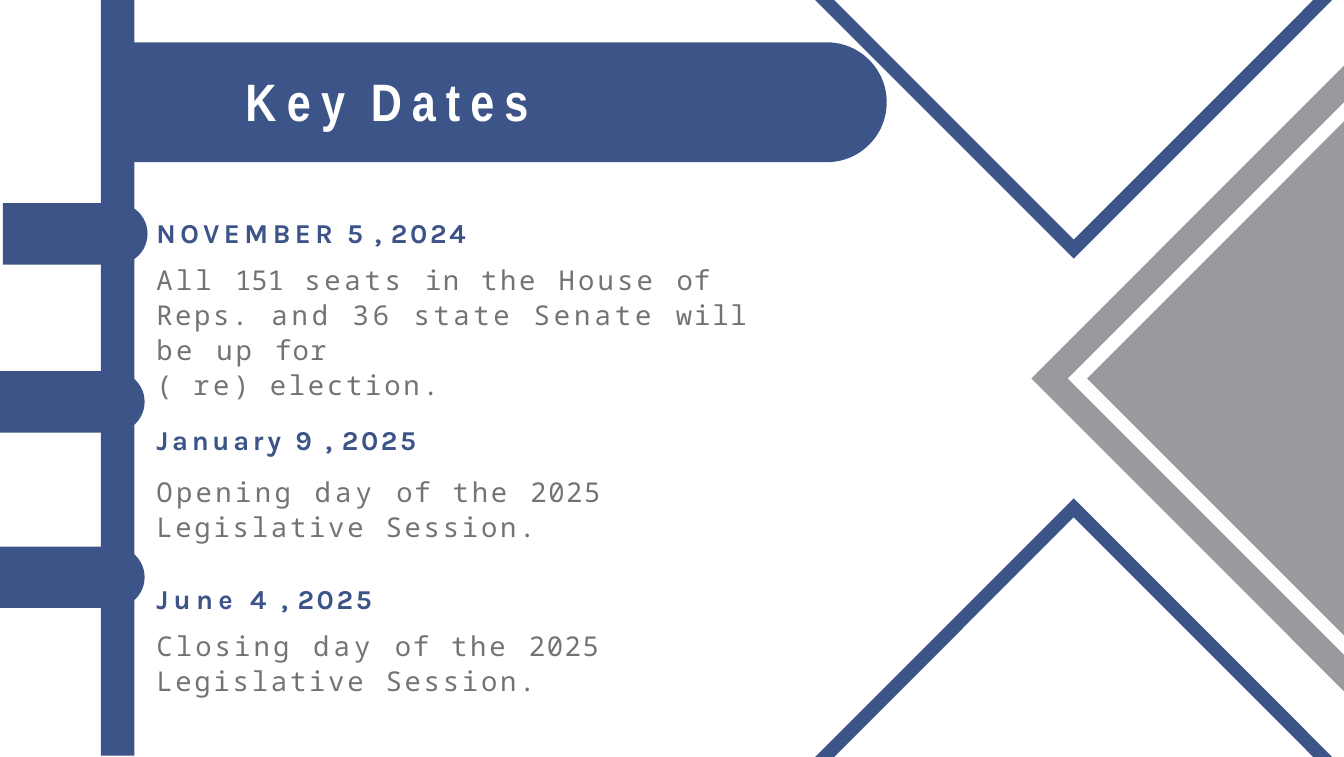
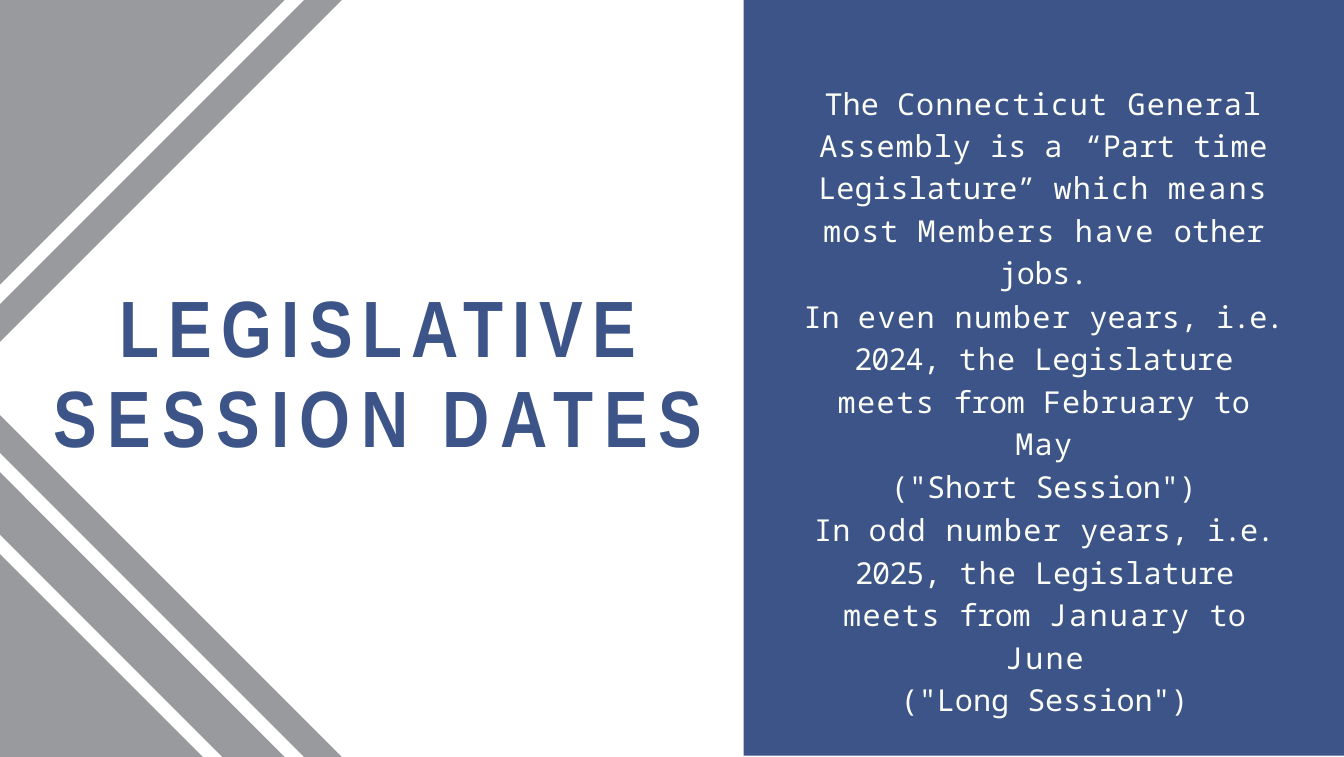
from dataclasses import dataclass

from pptx import Presentation
from pptx.dml.color import RGBColor
from pptx.enum.shapes import MSO_SHAPE as Preset
from pptx.enum.text import MSO_ANCHOR as Anchor, MSO_AUTO_SIZE as AutoSize, PP_ALIGN as Align
from pptx.util import Emu, Pt

PX = 9525
SLIDE_WIDTH, SLIDE_HEIGHT = 920, 518
BLUE, GRAY, WHITE = "3C5487", "999A9D", "FFFFFF"
BODY_GRAY, CREAM = "737373", "FBFDF6"
BAND = 13


@dataclass
class TextStyle:
    """Look shared by the runs of a paragraph; gap is the spacing of word spaces."""
    font: str
    size: float
    color: str
    gap: float
    bold: bool = False
    align: Align = Align.LEFT


BANNER_TITLE = TextStyle("Arial Narrow", 27, WHITE, 1.7, True)
SECTION_TITLE = TextStyle("Arial Narrow", 41, BLUE, 2.4, True, Align.CENTER)
DATE = TextStyle("Karla", 14, BLUE, 1.3, True)
DETAIL = TextStyle("Noto Sans Mono", 14, BODY_GRAY, 2)
PANEL_TEXT = TextStyle("Noto Sans Mono", 15.5, CREAM, 0, False, Align.CENTER)

SESSION = [("the ", 1.4), ("2025 ", 0.8), ("Legislative Session.", 1.4)]
KEY_DATES = [
    (DATE, 0, 1, [("NOVEMBER ", 2.3), ("5 ", 1.1), (", ", 0), ("2024", 1.4)]),
    (DETAIL, 6.3, 1.07, [
        ("All ", 1.6), ("151 ", -0.1), ("seats ", 1.9), ("in ", 0.7), ("the ", 1.4),
        ("House ", 1.6), ("of ", 0.5), ("Reps. ", 1.3), ("and 36 ", 2), ("state ", 1.8),
        ("Senate ", 2), ("will ", 0.9), ("be ", 1.8), ("up ", 1.4), ("for", 0.6)]),
    (DETAIL, 1.1, 1, [("(", 2), (" ", 0), ("re)", 1.9), (" ", 0), ("election.", 1.4)]),
    (DATE, 11.2, 1, [("January 9 ", 1.9), (", ", 0), ("2025", 1.4)]),
    (DETAIL, 9, 1.07, [("Opening ", 1.7), ("day ", 2.1), ("of ", 0.8), *SESSION]),
    (DATE, 20, 1, [("June 4 ", 2.7), (", ", 0), ("2025", 1.4)]),
    (DETAIL, 6.3, 1.07, [("Closing ", 1.6), ("day ", 2.1), ("of ", 0.8), *SESSION]),
]
PANEL_LINES = 1.17
PART_TIME = [
    ("The ", 0), ("Connecticut General ", 0.6), ("Assembly ", 0.5), ("is ", 0), ("a ", 2.1),
    ("“Part ", 0), ("time ", 0.3), ("Legislature” ", 0), ("which ", 0.6), ("means ", 1.1),
    ("most ", 0.5), ("Members ", 0.9), ("have ", 1.1), ("other ", 0), ("jobs.", -0.2)]


def rgb(color):
    """Turn a hex string into a colour."""
    return RGBColor.from_string(color)


def emu(box):
    """Turn lengths in px into EMU."""
    return [Emu(round(length * PX)) for length in box]


def paint(shape, color):
    """Give a shape a flat fill without line or shadow."""
    shape.fill.solid()
    shape.fill.fore_color.rgb = rgb(color)
    shape.line.fill.background()
    shape.shadow.inherit = False


def add_outline(slide, points, color):
    """Draw a closed polygon."""
    builder = slide.shapes.build_freeform(*points[0], scale=PX)
    builder.add_line_segments(points[1:], close=True)
    paint(builder.convert_to_shape(), color)


def add_block(slide, box, color):
    """Draw a plain rectangle."""
    paint(slide.shapes.add_shape(Preset.RECTANGLE, *emu(box)), color)


def add_tab(slide, box):
    """Draw a blue bar whose right end is round."""
    left, top, width, height = box
    shift = (width - height) / 2
    upright = (left + shift, top - shift, height, width)
    shape = slide.shapes.add_shape(Preset.ROUND_2_SAME_RECTANGLE, *emu(upright))
    shape.rotation = 90
    shape.adjustments[0] = 0.5
    paint(shape, BLUE)


def add_run(paragraph, style, text, spacing):
    """Add one styled run with its letter spacing in points."""
    run = paragraph.add_run()
    run.text = text
    run.font.name = style.font
    run.font.size = Pt(style.size)
    run.font.bold = style.bold
    run.font.color.rgb = rgb(style.color)
    run._r.get_or_add_rPr().set("spc", str(round(spacing * 100)))


def add_text(slide, box, inset, paragraphs):
    """Place paragraphs given as style, space before, line spacing and runs."""
    shape = slide.shapes.add_textbox(*emu(box))
    frame = shape.text_frame
    frame.word_wrap = True
    frame.auto_size = AutoSize.SHAPE_TO_FIT_TEXT
    frame.vertical_anchor = Anchor.TOP
    frame.margin_left = frame.margin_right = frame.margin_bottom = 0
    frame.margin_top = Emu(inset * PX)
    for index, (style, before, line_spacing, runs) in enumerate(paragraphs):
        paragraph = frame.add_paragraph() if index else frame.paragraphs[0]
        paragraph.alignment = style.align
        paragraph.space_before = Pt(before)
        paragraph.line_spacing = line_spacing
        for text, spacing in runs:
            word = text.rstrip() or text
            add_run(paragraph, style, word, spacing)
            if word != text:
                add_run(paragraph, style, " ", style.gap)


def add_chevron(slide, box, points_up):
    """Draw a blue V, or its mirror, as deep as its box."""
    left, top, width, height = box
    middle, right = left + width / 2, left + width
    base, tip, step = (top + height, top, BAND) if points_up else (top, top + height, -BAND)
    add_outline(slide, [(left, base), (middle, tip), (right, base), (right - BAND, base),
                        (middle, tip + step), (left + BAND, base)], BLUE)


def add_arrowhead(slide, box):
    """Draw a gray triangle pointing left with a white band inside."""
    left, top, width, height = box
    right, middle, bottom = left + width, top + height / 2, top + height
    inset = 25
    inner = inset + BAND
    add_outline(slide, [(right, top), (left, middle), (right, bottom)], GRAY)
    add_outline(slide, [(right, top + inset), (left + inset, middle), (right, bottom - inset),
                        (right, bottom - inner), (left + inner, middle), (right, top + inner)],
                WHITE)


def add_corner(slide, box, at_bottom, bands):
    """Draw a gray left corner crossed by white diagonal bands."""
    left, top, width, height = box
    edge, direction = (top + height, -1) if at_bottom else (top, 1)
    add_outline(slide, [(left, edge), (left + width, edge),
                        (left, edge + direction * height)], GRAY)
    for inner in bands:
        outer = inner + BAND
        add_outline(slide, [(left + inner, edge), (left + outer, edge),
                            (left, edge + direction * outer),
                            (left, edge + direction * inner)], WHITE)


def add_timeline(slide, box):
    """Draw the upright bar with the title banner and date tabs."""
    left, top, width, height = box
    add_block(slide, box, BLUE)
    add_tab(slide, (left + width - 1, top + 29, 516, 82))
    for tab_left, tab_top in ((2, 139), (0, 254), (0, 374)):
        add_tab(slide, (tab_left, top + tab_top, 99, 42))
    add_text(slide, (left + 99, top + 46, 321, 46), 1,
             [(BANNER_TITLE, 1.3, 1, [("Key ", 5.3), ("Dates", 5.2)])])
    add_text(slide, (left + 38, top + 133, 443, 358), 15, KEY_DATES)


def session_text(parity, year, start, start_spacing, end, end_spacing, name):
    """Return the paragraphs on one kind of session."""
    return [
        (PANEL_TEXT, 0.9, PANEL_LINES, [
            ("In ", 0), (parity, 0.8), ("number ", 0.7), ("years, ", 0), ("i.e. ", -0.8),
            (year, -0.5), ("the ", 0.5), ("Legislature ", 0), ("meets ", 0.8),
            ("from ", -0.2), (start, start_spacing), ("to ", 0), (end, end_spacing)]),
        (PANEL_TEXT, 3.4, 1, [(name, 0), ('Session")', -0.1)]),
    ]


def add_panel(slide, box):
    """Draw the blue panel and its three texts."""
    left, top, width, height = box
    add_block(slide, box, BLUE)
    short = session_text("even ", "2024, ", "February ", 0.5, "May", 0.7, '("Short ')
    long = session_text("odd ", "2025, ", "January ", 1.2, "June", 1.1, '("Long ')
    texts = ((40, 53, 331, [(PANEL_TEXT, 0.9, PANEL_LINES, PART_TIME)]),
             (41, 199, 329, short), (46, 345, 320, long))
    for text_left, text_top, text_width, paragraphs in texts:
        add_text(slide, (left + text_left, top + text_top, text_width, 120), 1, paragraphs)


def build_key_dates(slide):
    """Build the slide of key dates."""
    add_arrowhead(slide, (706, 45, 214, 428))
    add_chevron(slide, (558, 341, 354, 177), True)
    add_chevron(slide, (558, 0, 354, 177), False)
    add_timeline(slide, (69, 0, 23, 517))


def build_session_dates(slide):
    """Build the slide of session dates."""
    add_corner(slide, (0, 0, 234, 234), False, (195,))
    add_corner(slide, (0, 284, 234, 234), True, (195, 139))
    add_text(slide, (29, 193, 460, 126), 1,
             [(SECTION_TITLE, 1.2, Pt(46.1), [("LEGISLATIVE", 4.8)]),
              (SECTION_TITLE, 0, Pt(46.1), [("SESSION ", 5.5), ("DATES", 5.5)])])
    add_panel(slide, (509, 0, 411, 517))


def main():
    """Build and save the presentation."""
    presentation = Presentation()
    presentation.slide_width, presentation.slide_height = emu((SLIDE_WIDTH, SLIDE_HEIGHT))
    for build in (build_key_dates, build_session_dates):
        build(presentation.slides.add_slide(presentation.slide_layouts[6]))
    presentation.save("out.pptx")


if __name__ == "__main__":
    main()
